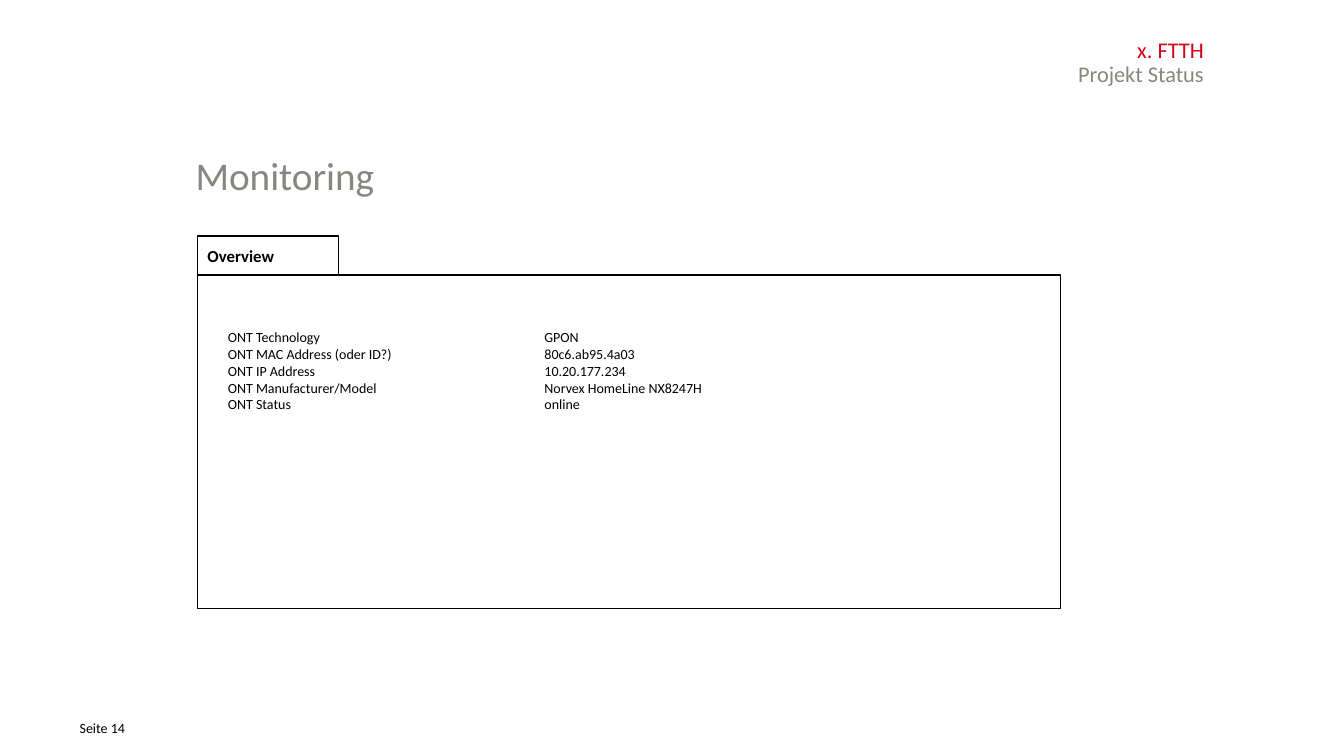
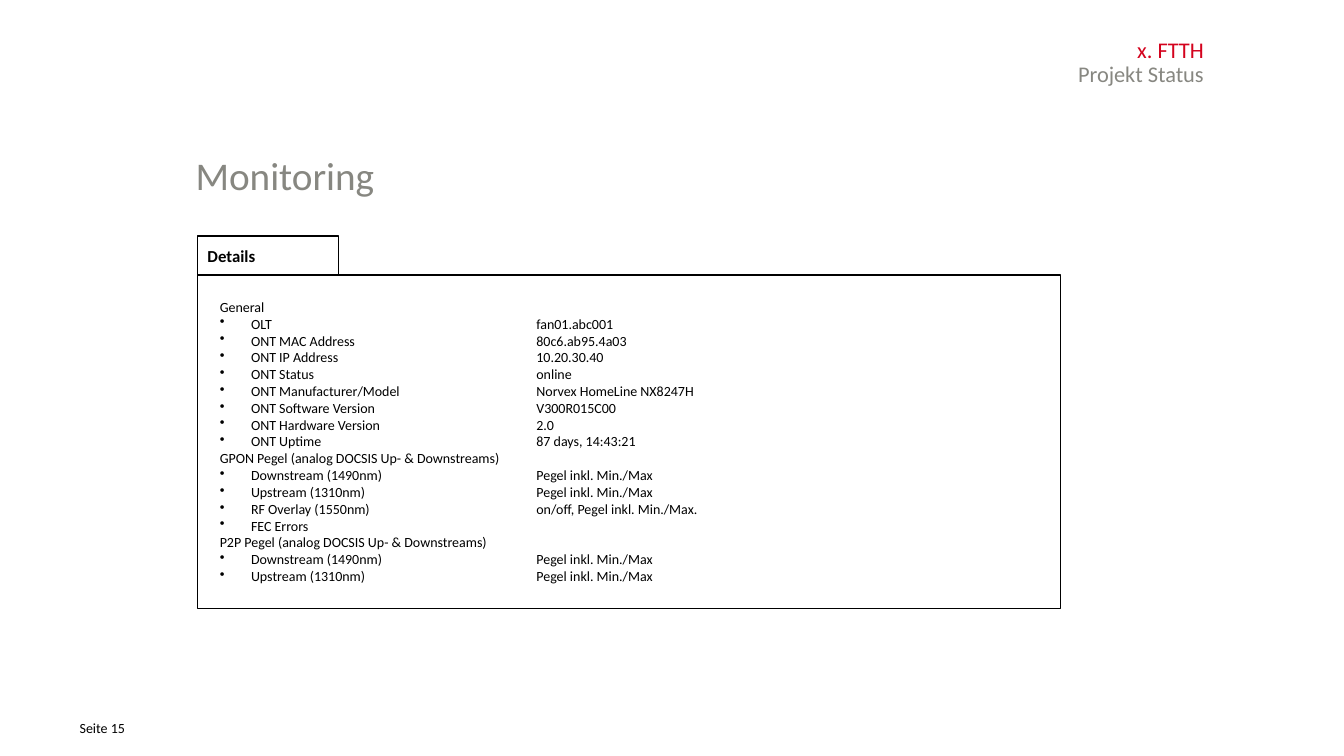
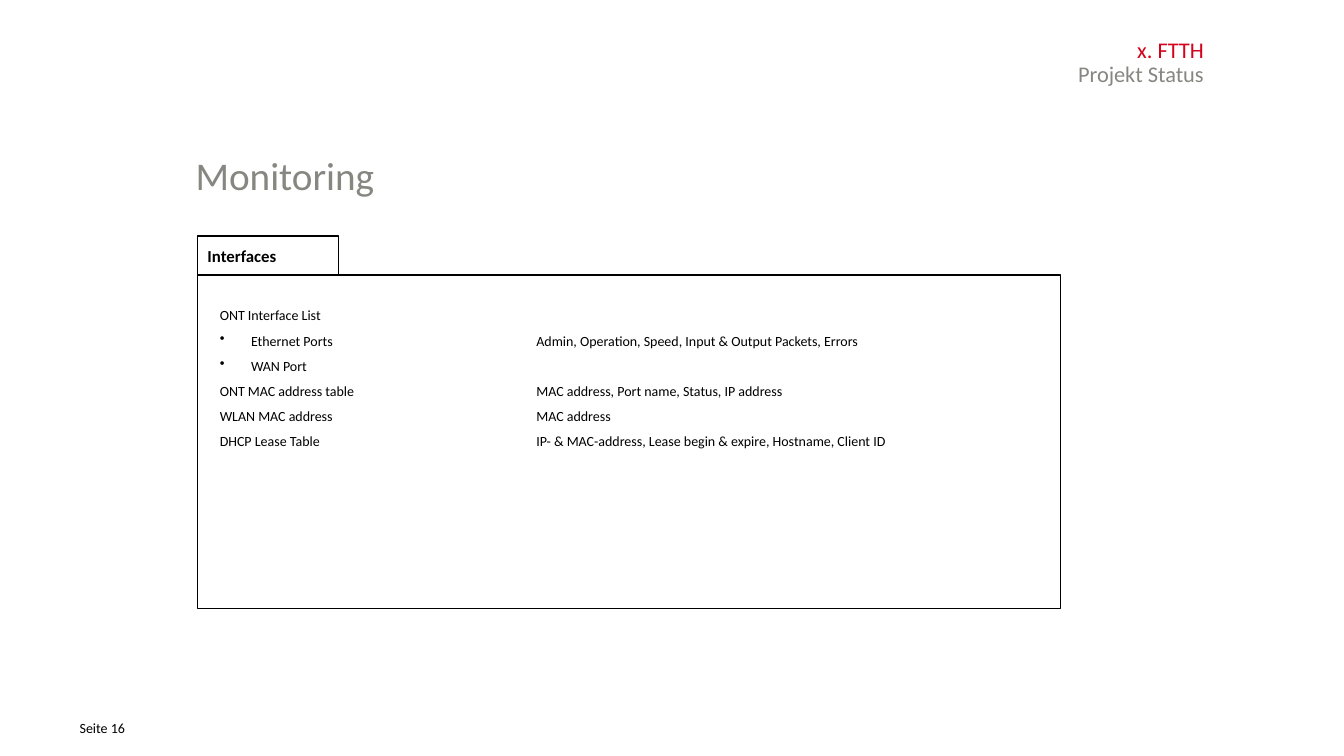
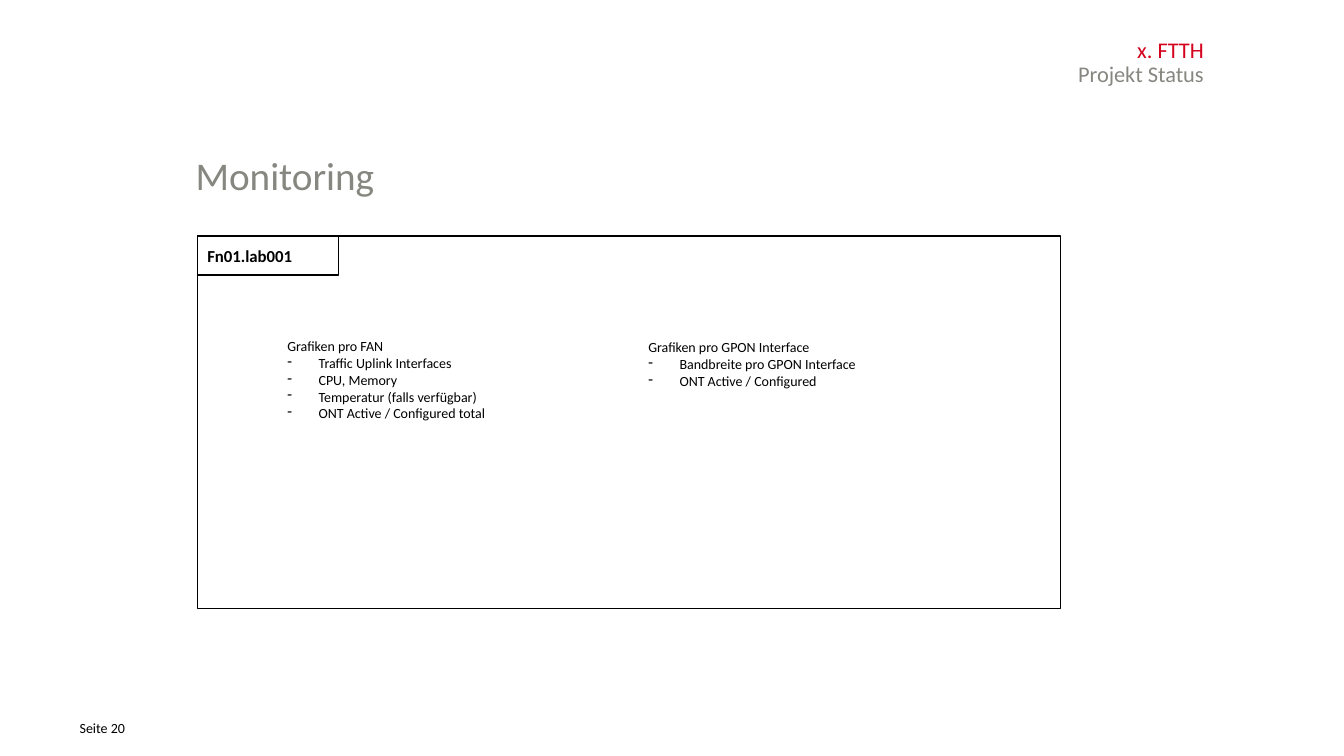
from lxml.etree import SubElement
from pptx import Presentation
from pptx.dml.color import RGBColor
from pptx.enum.shapes import MSO_SHAPE as Shape
from pptx.enum.text import MSO_ANCHOR as Anchor, MSO_AUTO_SIZE as AutoSize, PP_ALIGN as Align
from pptx.oxml.ns import qn
from pptx.util import Inches, Pt

FONT = "Calibri"
GREY, RED, BLACK, WHITE = "878781", "D4021D", "000000", "FFFFFF"
INDENT, VALUE_TAB = Inches(0.31), Inches(3.14)
PANEL_LEFT, PANEL_WIDTH, PANEL_BOTTOM = 1.96, 8.56, 6.04
TAB_TOP, TAB_WIDTH, TAB_HEIGHT = 2.34, 1.4, 0.39


def color(value):
    return RGBColor.from_string(value)


def write(box, lines, size, shade, bold=False, align=Align.LEFT, spacing=None,
          tabbed=False, margin=0):
    frame = box.text_frame
    frame.word_wrap = True
    frame.auto_size = AutoSize.NONE
    frame.margin_left = frame.margin_right = Inches(margin)
    frame.margin_top = frame.margin_bottom = Inches(margin / 2)
    for index, line in enumerate(lines):
        para = frame.add_paragraph() if index else frame.paragraphs[0]
        bullet = line[0] if line[:2] in ("• ", "- ") else ""
        para.text = line[2:] if bullet else line
        para.alignment = align
        para.line_spacing = spacing
        properties = para._p.get_or_add_pPr()
        if bullet:
            properties.set("marL", str(INDENT))
            properties.set("indent", str(-INDENT))
            SubElement(properties, qn("a:buChar"), char=bullet)
        if tabbed:
            stops = SubElement(properties, qn("a:tabLst"))
            SubElement(stops, qn("a:tab"), pos=str(VALUE_TAB), algn="l")
        for span in para.runs:
            span.font.name = FONT
            span.font.size = Pt(size)
            span.font.bold = bold
            span.font.color.rgb = color(shade)


overview = [
    "ONT Technology\tGPON",
    "ONT MAC Address (oder ID?)\t80c6.ab95.4a03",
    "ONT IP Address\t10.20.177.234",
    "ONT Manufacturer/Model\tNorvex HomeLine NX8247H",
    "ONT Status\tonline",
]
details = [
    "General",
    "• OLT\tfan01.abc001",
    "• ONT MAC Address\t80c6.ab95.4a03",
    "• ONT IP Address\t10.20.30.40",
    "• ONT Status\tonline",
    "• ONT Manufacturer/Model\tNorvex HomeLine NX8247H",
    "• ONT Software Version\tV300R015C00",
    "• ONT Hardware Version\t2.0",
    "• ONT Uptime\t87 days, 14:43:21",
    "GPON Pegel (analog DOCSIS Up- & Downstreams)",
    "• Downstream (1490nm)\tPegel inkl. Min./Max",
    "• Upstream (1310nm)\tPegel inkl. Min./Max",
    "• RF Overlay (1550nm)\ton/off, Pegel inkl. Min./Max.",
    "• FEC Errors",
    "P2P Pegel (analog DOCSIS Up- & Downstreams)",
    "• Downstream (1490nm)\tPegel inkl. Min./Max",
    "• Upstream (1310nm)\tPegel inkl. Min./Max",
]
interfaces = [
    "ONT Interface List",
    "• Ethernet Ports\tAdmin, Operation, Speed, Input & Output Packets, Errors",
    "• WAN Port",
    "ONT MAC address table\tMAC address, Port name, Status, IP address",
    "WLAN MAC address\tMAC address",
    "DHCP Lease Table\tIP- & MAC-address, Lease begin & expire, Hostname, Client ID",
]
interface_graphs = [
    "Grafiken pro GPON Interface",
    "- Bandbreite pro GPON Interface",
    "- ONT Active / Configured",
]
fan_graphs = [
    "Grafiken pro FAN",
    "- Traffic Uplink Interfaces",
    "- CPU, Memory",
    "- Temperatur (falls verfügbar)",
    "- ONT Active / Configured total",
]

below_tab = TAB_TOP + TAB_HEIGHT
pages = [
    (14, "Overview", below_tab, None, [((2.26, 3.26, 6.61, 2.28), overview)]),
    (15, "Details", below_tab, None, [((2.18, 2.96, 6.61, 2.28), details)]),
    (16, "Interfaces", below_tab, 1.5, [((2.18, 2.96, 7.95, 2.28), interfaces)]),
    (20, "Fn01.lab001", TAB_TOP, None, [((6.43, 3.36, 3.39, 1.22), interface_graphs),
                                        ((2.85, 3.35, 3.39, 1.22), fan_graphs)]),
]

deck = Presentation()
deck.slide_width, deck.slide_height = Inches(13.33), Inches(7.5)

for number, tab_name, panel_top, spacing, blocks in pages:
    page = deck.slides.add_slide(deck.slide_layouts[5])
    title = page.shapes.title
    title.left, title.top = Inches(1.94), Inches(1.55)
    title.width, title.height = Inches(9.21), Inches(0.47)
    title.text_frame.vertical_anchor = Anchor.TOP
    write(title, ["Monitoring"], 28, GREY, spacing=0.9)

    for top, heading, shade in ((0.36, "x. FTTH", RED), (0.6, "Projekt Status", GREY)):
        box = page.shapes.add_textbox(Inches(6.74), Inches(top), Inches(5.2), Inches(0.24))
        write(box, [heading], 16, shade, align=Align.RIGHT, spacing=Pt(19.2))

    footer = page.shapes.add_textbox(Inches(0.79), Inches(7.14), Inches(1), Inches(0.16))
    write(footer, [f"Seite {number}"], 10, BLACK)

    for top, width, height, lines in (
        (panel_top, PANEL_WIDTH, PANEL_BOTTOM - panel_top, []),
        (TAB_TOP, TAB_WIDTH, TAB_HEIGHT, [tab_name]),
    ):
        panel = page.shapes.add_shape(Shape.RECTANGLE, Inches(PANEL_LEFT), Inches(top),
                                      Inches(width), Inches(height))
        panel.shadow.inherit = False
        panel.fill.solid()
        panel.fill.fore_color.rgb = color(WHITE)
        panel.line.color.rgb = color(BLACK)
        panel.line.width = Pt(1)
        panel.text_frame.vertical_anchor = Anchor.MIDDLE
        write(panel, lines, 12, BLACK, bold=True, margin=0.1)

    for place, lines in blocks:
        box = page.shapes.add_textbox(*map(Inches, place))
        has_values = any("\t" in line for line in lines)
        write(box, lines, 10, BLACK, spacing=spacing, tabbed=has_values)

deck.save("out.pptx")
